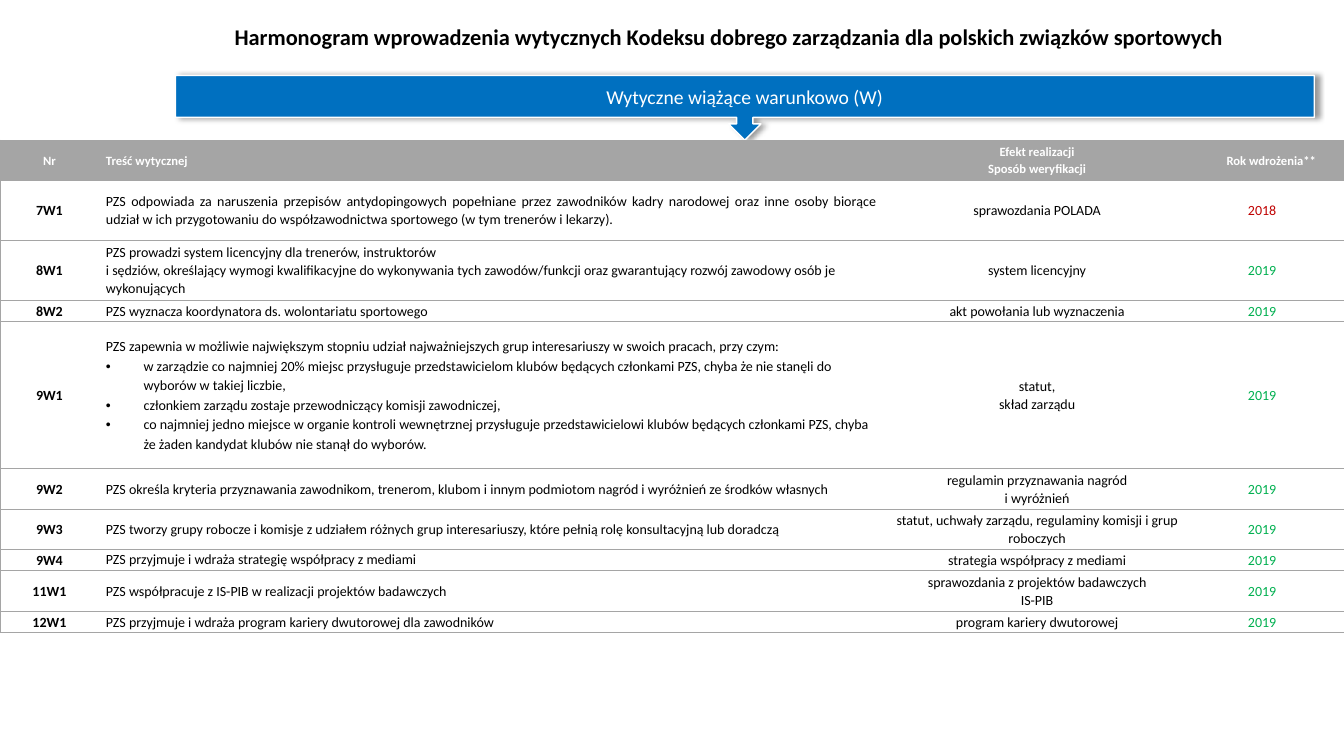
from lxml.etree import SubElement
from pptx import Presentation
from pptx.dml.color import RGBColor
from pptx.enum.shapes import MSO_SHAPE
from pptx.enum.text import MSO_ANCHOR, PP_ALIGN
from pptx.oxml.ns import qn
from pptx.util import Cm, Pt

GREY, BLACK, WHITE, BLUE = "A5A5A5", "000000", "FFFFFF", "0070C0"
RED, GREEN = "C00000", "00B050"
WIDTHS = [2.49, 19.76, 7.77, 3.57, 0.28]
HEAD = ("Nr", ["Treść wytycznej"], ["Efekt realizacji", "Sposób weryfikacji"],
        "Rok wdrożenia**", 1.02)
ROWS = [
    ("7W1", ["PZS odpowiada za naruszenia przepisów antydopingowych popełniane przez "
             "zawodników kadry narodowej oraz inne osoby biorące udział w ich przygotowaniu "
             "do współzawodnictwa sportowego (w tym trenerów i lekarzy)."],
     ["sprawozdania POLADA"], "2018", 1.5),
    ("8W1", ["PZS prowadzi system licencyjny dla trenerów, instruktorów\n"
             "i sędziów, określający wymogi kwalifikacyjne do wykonywania tych "
             "zawodów/funkcji oraz gwarantujący rozwój zawodowy osób je wykonujących"],
     ["system licencyjny"], "2019", 1.52),
    ("8W2", ["PZS wyznacza koordynatora ds. wolontariatu sportowego"],
     ["akt powołania lub wyznaczenia"], "2019", 0.53),
    ("9W1", ["PZS zapewnia w możliwie największym stopniu udział najważniejszych grup "
             "interesariuszy w swoich pracach, przy czym:",
             "w zarządzie co najmniej 20% miejsc przysługuje przedstawicielom klubów "
             "będących członkami PZS, chyba że nie stanęli do wyborów w takiej liczbie,",
             "członkiem zarządu zostaje przewodniczący komisji zawodniczej,",
             "co najmniej jedno miejsce w organie kontroli wewnętrznej przysługuje "
             "przedstawicielowi klubów będących członkami PZS, chyba że żaden kandydat "
             "klubów nie stanął do wyborów."],
     ["statut,\nskład zarządu"], "2019", 3.71),
    ("9W2", ["PZS określa kryteria przyznawania zawodnikom, trenerom, klubom i innym "
             "podmiotom nagród i wyróżnień ze środków własnych"],
     ["regulamin przyznawania nagród\ni wyróżnień"], "2019", 1.02),
    ("9W3", ["PZS tworzy grupy robocze i komisje z udziałem różnych grup interesariuszy, "
             "które pełnią rolę konsultacyjną lub doradczą"],
     ["statut, uchwały zarządu, regulaminy komisji i grup roboczych"], "2019", 1.02),
    ("9W4", ["PZS przyjmuje i wdraża strategię współpracy z mediami"],
     ["strategia współpracy z mediami"], "2019", 0.53),
    ("11W1", ["PZS współpracuje z IS-PIB w realizacji projektów badawczych"],
     ["sprawozdania z projektów badawczych\nIS-PIB"], "2019", 1.02),
    ("12W1", ["PZS przyjmuje i wdraża program kariery dwutorowej dla zawodników"],
     ["program kariery dwutorowej"], "2019", 0.53),
]


def tint(code):
    """Turn a hex string into a colour."""
    return RGBColor.from_string(code)


def write(frame, texts, size, code, bold=False, align=PP_ALIGN.CENTER, space=1.0):
    """Write one paragraph per text, with bullets after a left-aligned first one."""
    for i, text in enumerate(texts):
        para = frame.paragraphs[0] if i == 0 else frame.add_paragraph()
        para.text = text
        para.alignment = align
        para.line_spacing = space
        if i and align == PP_ALIGN.LEFT:
            para.line_spacing = 1.15
            props = para._p.get_or_add_pPr()
            props.set("marL", str(Cm(0.95)))
            props.set("indent", str(-Cm(0.95)))
            SubElement(props, qn("a:buFont"), typeface="Arial")
            SubElement(props, qn("a:buChar"), char="•")
        if not text:
            SubElement(para._p, qn("a:endParaRPr"), sz=str(size * 100))
        font = para.font
        font.name, font.size, font.bold = "Calibri", Pt(size), bold
        font.color.rgb = tint(code)


def banner(slide, left, top, width, height):
    """Place the blue callout with its arrow and shadow."""
    shape = slide.shapes.add_shape(MSO_SHAPE.DOWN_ARROW_CALLOUT,
                                   Cm(left), Cm(top), Cm(width), Cm(height))
    shape.fill.solid()
    shape.fill.fore_color.rgb = tint(BLUE)
    shape.line.color.rgb = tint(WHITE)
    shape.line.width = Pt(1)
    shape.shadow.inherit = False
    glow = SubElement(shape._element.spPr.find(qn("a:effectLst")), qn("a:outerShdw"),
                      blurRad=str(Pt(4)), dist=str(Pt(3)), dir="0", algn="l", rotWithShape="0")
    shade = SubElement(glow, qn("a:srgbClr"), val=BLACK)
    SubElement(shade, qn("a:alpha"), val="40000")
    shape.text_frame.vertical_anchor = MSO_ANCHOR.MIDDLE
    write(shape.text_frame, ["Wytyczne wiążące warunkowo (W)"], 14, WHITE)


def title(slide, left, top, width, height):
    """Place the slide title."""
    frame = slide.shapes.add_textbox(Cm(left), Cm(top), Cm(width), Cm(height)).text_frame
    frame.word_wrap = True
    frame.vertical_anchor = MSO_ANCHOR.MIDDLE
    write(frame, ["Harmonogram wprowadzenia wytycznych Kodeksu dobrego zarządzania "
                  "dla polskich związków sportowych"], 16, BLACK, True, space=0.9)


def dress(cell, sides, head):
    """Set the margins, borders and fill of a cell."""
    cell.margin_left = cell.margin_right = Cm(0.18)
    cell.margin_top = cell.margin_bottom = 0
    cell.vertical_anchor = MSO_ANCHOR.MIDDLE
    for side in "LRTB":
        line = SubElement(cell._tc.get_or_add_tcPr(), qn(f"a:ln{side}"), w=str(Pt(0.5)))
        if side in sides:
            SubElement(SubElement(line, qn("a:solidFill")), qn("a:srgbClr"), val=GREY)
        else:
            SubElement(line, qn("a:noFill"))
    if head:
        cell.fill.solid()
        cell.fill.fore_color.rgb = tint(GREY)
    else:
        cell.fill.background()


def plan(slide, left, top):
    """Place the table of guidelines."""
    rows = [HEAD] + ROWS
    high = sum(row[-1] for row in rows)
    table = slide.shapes.add_table(len(rows), len(WIDTHS), Cm(left), Cm(top),
                                   Cm(sum(WIDTHS)), Cm(high)).table
    table.first_row = table.horz_banding = False
    for col, width in zip(table.columns, WIDTHS):
        col.width = Cm(width)
    for r, (mark, texts, proof, year, height) in enumerate(rows):
        head = r == 0
        table.rows[r].height = Cm(height)
        size, ink = (9, WHITE) if head else (10, BLACK)
        hue = WHITE if head else RED if year == "2018" else GREEN
        align = PP_ALIGN.JUSTIFY if mark == "7W1" else PP_ALIGN.LEFT
        space = 1.0 if mark in ("9W3", "9W4") else 1.07
        for c in range(len(WIDTHS)):
            dress(table.cell(r, c), "TB" + {0: "L", 4: "R"}.get(c, ""), head)
        frames = [table.cell(r, c).text_frame for c in range(len(WIDTHS))]
        write(frames[0], [mark], size, ink, True, space=1.07)
        write(frames[1], texts, size, ink, head, align, space)
        write(frames[2], proof, size, ink, head, space=1.07)
        write(frames[3], [year], size, hue, head, space=1.07)
        write(frames[4], [""], size, ink)
    table.cell(0, 3).merge(table.cell(0, 4))


def main():
    """Build and save the slide."""
    deck = Presentation()
    deck.slide_width, deck.slide_height = Cm(33.87), Cm(19.05)
    slide = deck.slides.add_slide(deck.slide_layouts[6])
    banner(slide, 4.42, 1.9, 28.7, 1.63)
    title(slide, 3.25, 0.25, 30.25, 1.42)
    plan(slide, 0, 3.53)
    deck.save("out.pptx")


if __name__ == "__main__":
    main()
